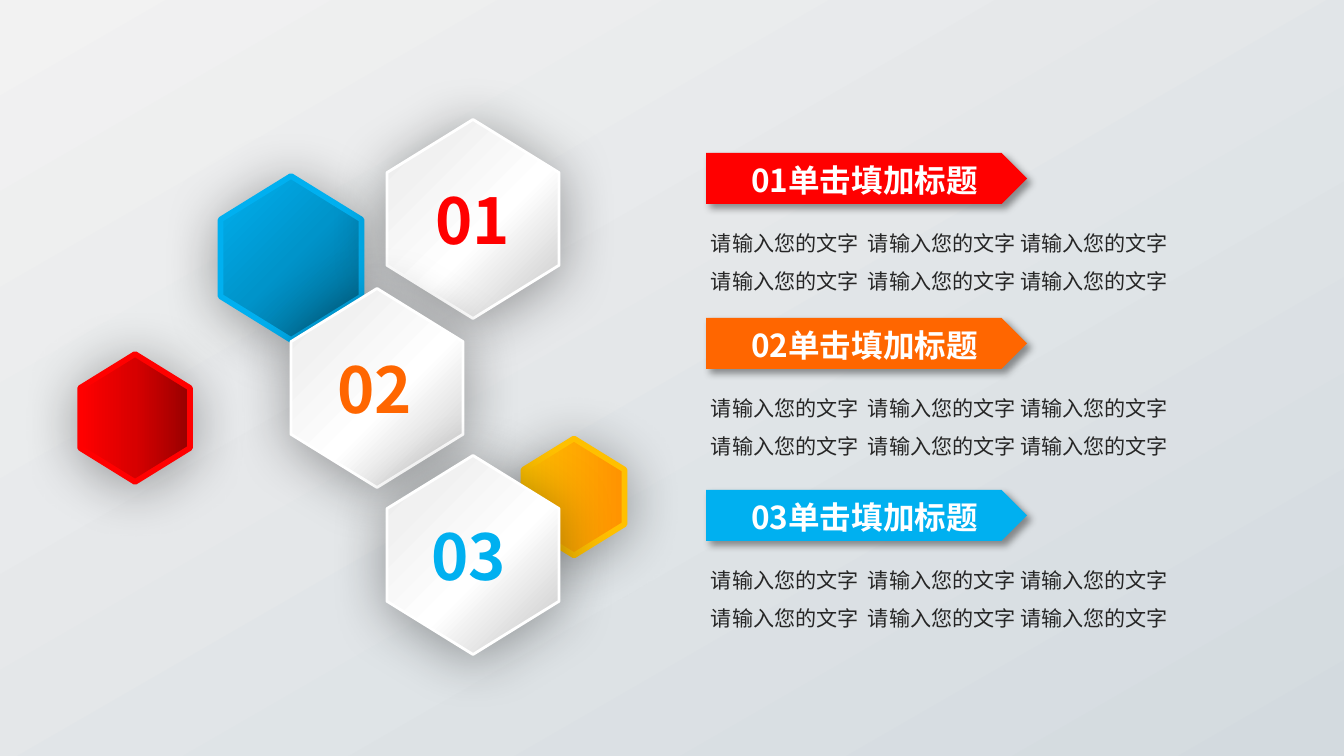
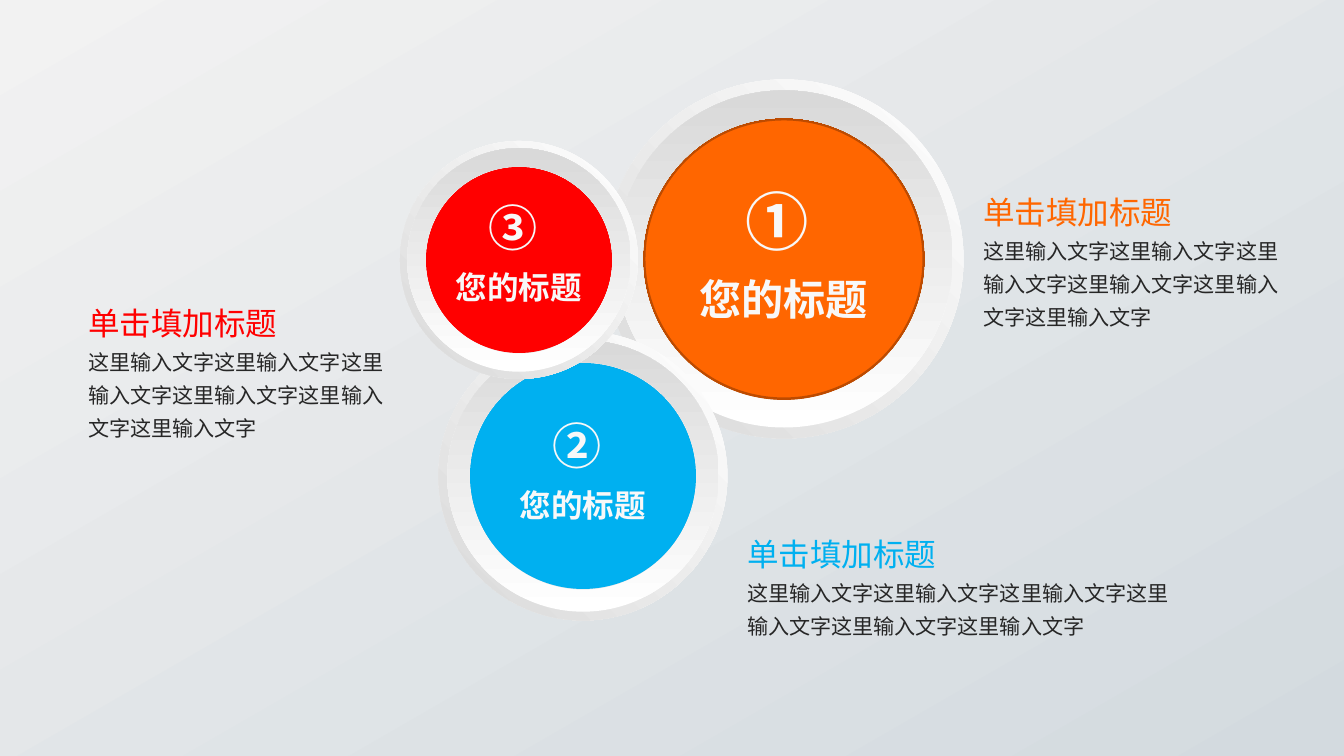
from dataclasses import dataclass

from lxml.etree import SubElement
from pptx import Presentation
from pptx.dml.color import RGBColor
from pptx.enum.shapes import MSO_SHAPE
from pptx.enum.text import PP_ALIGN
from pptx.oxml.ns import qn
from pptx.util import Emu, Pt

SCALE = 914400 / 134.4


@dataclass(frozen=True)
class Theme:
    font: str = "Noto Sans CJK SC"
    red: str = "FF0000"
    orange: str = "FF6600"
    blue: str = "00B0F0"
    gold: str = "FFC000"
    rust: str = "BD4B00"
    white: str = "FFFFFF"
    pale: str = "F8F8F8"
    ink: str = "262626"
    huge: float = 33.9
    large: float = 26.3
    mid: float = 22.6
    head: float = 16.9
    body: float = 11.3
    # Gradients: (position, colour) stops
    page: tuple = ((0, "F2F2F2"), (100, "D3DADF"))
    ring: tuple = ((0, "FFFFFF"), (100, "D9D9D9"))
    steel: tuple = ((6, "CCCCCC"), (43, "FFFFFF"), (80, "F1F1F1"), (100, "E4E4E4"))
    amber: tuple = ((0, "FF9201"), (100, "FFC000"))
    ocean: tuple = ((0, "00688E"), (50, "0094CA"), (100, "00B0F0"))
    ruby: tuple = ((0, "970000"), (50, "D70000"), (100, "FF0000"))
    # Shadows: opacity, blur, distance, angle
    glow: tuple = (37, 31, 3, 90)
    drop: tuple = (40, 4, 3, 45)


T = Theme()


def px(n):
    return Emu(round(n * SCALE))


def rgb(code):
    return RGBColor.from_string(code)


def blend(fill, root, stops, angle):
    """Give a fill its gradient stops and clockwise angle."""
    fill.gradient()
    grad = next(root.iter(qn("a:gradFill")))
    for child in list(grad):
        grad.remove(child)
    grad.set("rotWithShape", "1")
    items = SubElement(grad, qn("a:gsLst"))
    for pos, code in stops:
        stop = SubElement(items, qn("a:gs"), pos=str(pos * 1000))
        SubElement(stop, qn("a:srgbClr"), val=code)
    SubElement(grad, qn("a:lin"), ang=str(angle * 60000), scaled="0")


def shade(shape, alpha, blur, dist, angle):
    """Cast an outer shadow."""
    effects = shape.element.spPr.find(qn("a:effectLst"))
    outer = SubElement(effects, qn("a:outerShdw"), blurRad=str(Pt(blur)),
                       dist=str(Pt(dist)), dir=str(angle * 60000),
                       algn="ctr", rotWithShape="0")
    color = SubElement(outer, qn("a:srgbClr"), val="000000")
    SubElement(color, qn("a:alpha"), val=str(alpha * 1000))


def form(shapes, kind, box, fill, angle=0, edge=None, width=0, shadow=None):
    """Add a preset shape with a plain or gradient fill."""
    shape = shapes.add_shape(kind, *map(px, box))
    shape.shadow.inherit = False
    if isinstance(fill, str):
        shape.fill.solid()
        shape.fill.fore_color.rgb = rgb(fill)
    else:
        blend(shape.fill, shape.element, fill, angle)
    if edge:
        shape.line.color.rgb = rgb(edge)
        shape.line.width = Pt(width)
    else:
        shape.line.fill.background()
    if shadow:
        shade(shape, *shadow)
    return shape


def write(shapes, box, lines, bold=False, space=None, align=None, inset=None, tab=None):
    """Add a text box; lines hold (text, size, colour)."""
    frame = shapes.add_textbox(*map(px, box)).text_frame
    frame.word_wrap = True
    if inset:
        frame.margin_left = frame.margin_right = px(inset[0])
        frame.margin_top = frame.margin_bottom = px(inset[1])
    for i, (text, size, color) in enumerate(lines):
        para = frame.add_paragraph() if i else frame.paragraphs[0]
        para.text = text
        props = para._p.get_or_add_pPr()
        if tab:
            tabs = SubElement(props, qn("a:tabLst"))
            SubElement(tabs, qn("a:tab"), pos=str(px(tab)), algn="l")
        if space:
            para.line_spacing = space
        if align:
            para.alignment = align
        para.font.size = Pt(size)
        para.font.bold = bold
        para.font.color.rgb = rgb(color)
        para.font.name = T.font
        SubElement(props.find(qn("a:defRPr")), qn("a:ea"), typeface=T.font)


def middle(x, y, w, h):
    return x - w / 2, y - h / 2, w, h


# Slide 1: hexagons and labelled rows

def comb(shapes, x, y, w, h, fill, angle, edge, width):
    """Hexagon standing on its point, centred on x, y."""
    shape = form(shapes, MSO_SHAPE.HEXAGON, middle(x, y, w, h), fill, angle,
                 edge, width, T.glow)
    shape.adjustments[0] = 0.309
    shape.rotation = 90


def cell(slide, x, y, label, color, shift):
    """White hexagon with its number."""
    shapes = slide.shapes.add_group_shape().shapes
    comb(shapes, x, y, 199, 172, T.steel, 135, T.white, 1.5)
    write(shapes, (x - shift, y - 44, 110, 44), [(label, T.huge, color)], bold=True)


def row(slide, x, y, label, color):
    """Arrow banner with two lines of text below."""
    shapes = slide.shapes.add_group_shape().shapes
    form(shapes, MSO_SHAPE.PENTAGON, (x, y, 321, 51), color, shadow=T.drop)
    write(shapes, (x + 32, y + 1, 269, 44),
          [(label + "单击填加标题", T.head, T.white)], bold=True)
    line = "请输入您的文字\t请输入您的文字 请输入您的文字"
    write(slide.shapes, (x - 4, y + 60, 488, 87), [(line, T.body, T.ink)] * 2,
          space=1.5, inset=(9, 5), tab=157)


def hive(slide):
    for spot in ((574, 497, 117, 101, T.amber, 90, T.gold),
                 (291, 258, 164, 141, T.ocean, 135, T.blue),
                 (135, 418, 128, 110, T.ruby, 90, T.red)):
        comb(slide.shapes, *spot, 3)
    items = (("01", T.red, 473, 219, 51, 153),
             ("02", T.orange, 377, 388, 53, 318),
             ("03", T.blue, 473, 555, 55, 490))
    for label, color, x, y, shift, _ in items:
        cell(slide, x, y, label, color, shift)
    for label, color, *_, top in items:
        row(slide, 706, top, label, color)


# Slide 2: ringed discs and notes

def dial(slide, x, y, size, color, mark, sizes, rise, edge=None):
    """Disc inside two rings, with a number and a title."""
    shapes = slide.shapes.add_group_shape().shapes
    disc, inner, wide = size * 0.782, size * 0.939, size * 1.044
    form(shapes, MSO_SHAPE.OVAL, middle(x, y, disc, disc), color, edge=edge, width=2)
    for span, angle, band in ((size, 135, 0.101), (inner, 270, 0.081)):
        ring = form(shapes, MSO_SHAPE.DONUT, middle(x, y, span, span), T.ring, angle)
        ring.adjustments[0] = band
    write(shapes, (x - wide / 2, y - rise, wide, size / 2),
          [(mark + " ", sizes[0], T.pale), ("您的标题", sizes[1], T.pale)],
          bold=True, space=1.3, align=PP_ALIGN.CENTER)


def note(slide, box, color):
    """Coloured heading with a paragraph."""
    write(slide.shapes, box, [("单击填加标题", T.head, color),
                              ("这里输入文字" * 6, T.body, T.ink)], space=1.3)


def dials(slide):
    small = (T.large, T.head)
    dial(slide, 784, 259, 359, T.orange, "①", (T.huge, T.mid), 106, T.rust)
    dial(slide, 583, 476, 289, T.blue, "②", small, 85)
    dial(slide, 519, 260, 238, T.red, "③", small, 87)
    note(slide, (734, 517, 465, 168), T.blue)
    note(slide, (970, 175, 339, 202), T.orange)
    note(slide, (75, 286, 339, 202), T.red)


def main():
    deck = Presentation()
    deck.slide_width, deck.slide_height = px(1344), px(756)
    # Shared page background
    master = deck.slide_master
    blend(master.background.fill, master.element, T.page, 60)
    for build in (hive, dials):
        build(deck.slides.add_slide(deck.slide_layouts[6]))
    deck.save("out.pptx")


if __name__ == "__main__":
    main()
